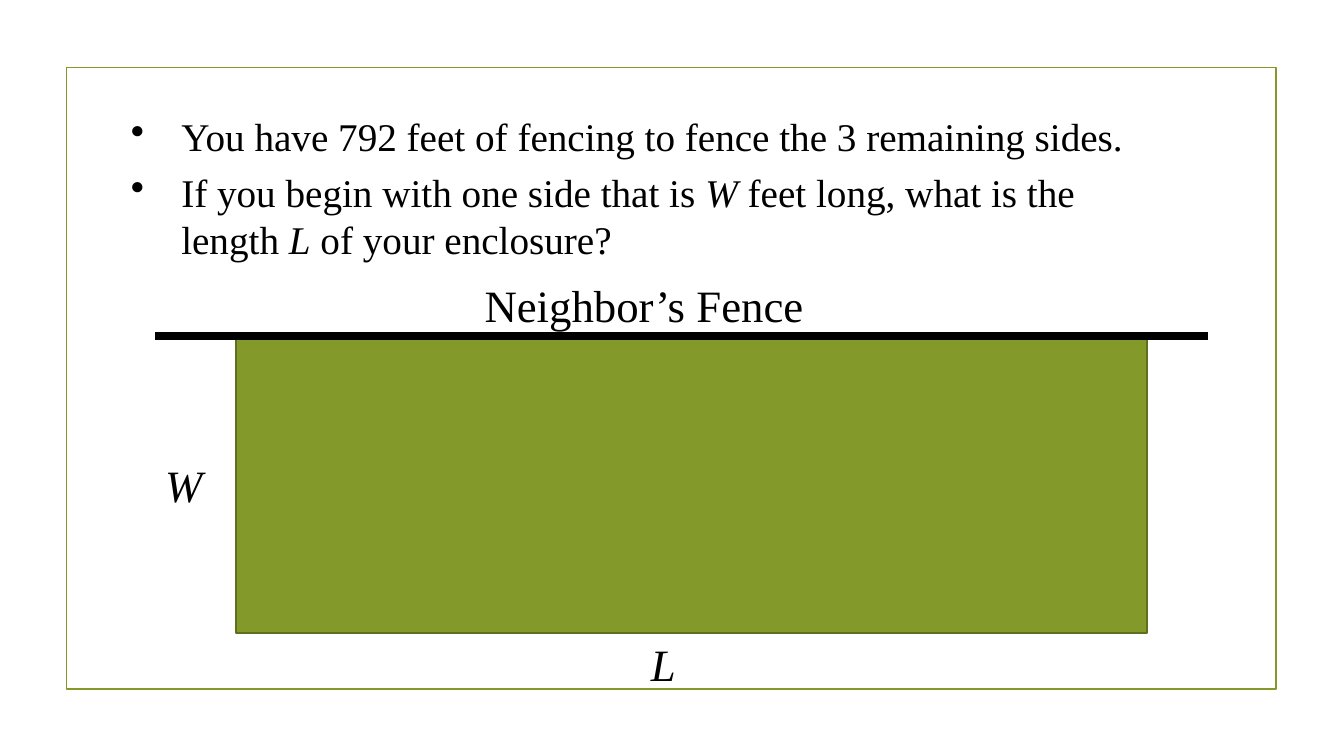
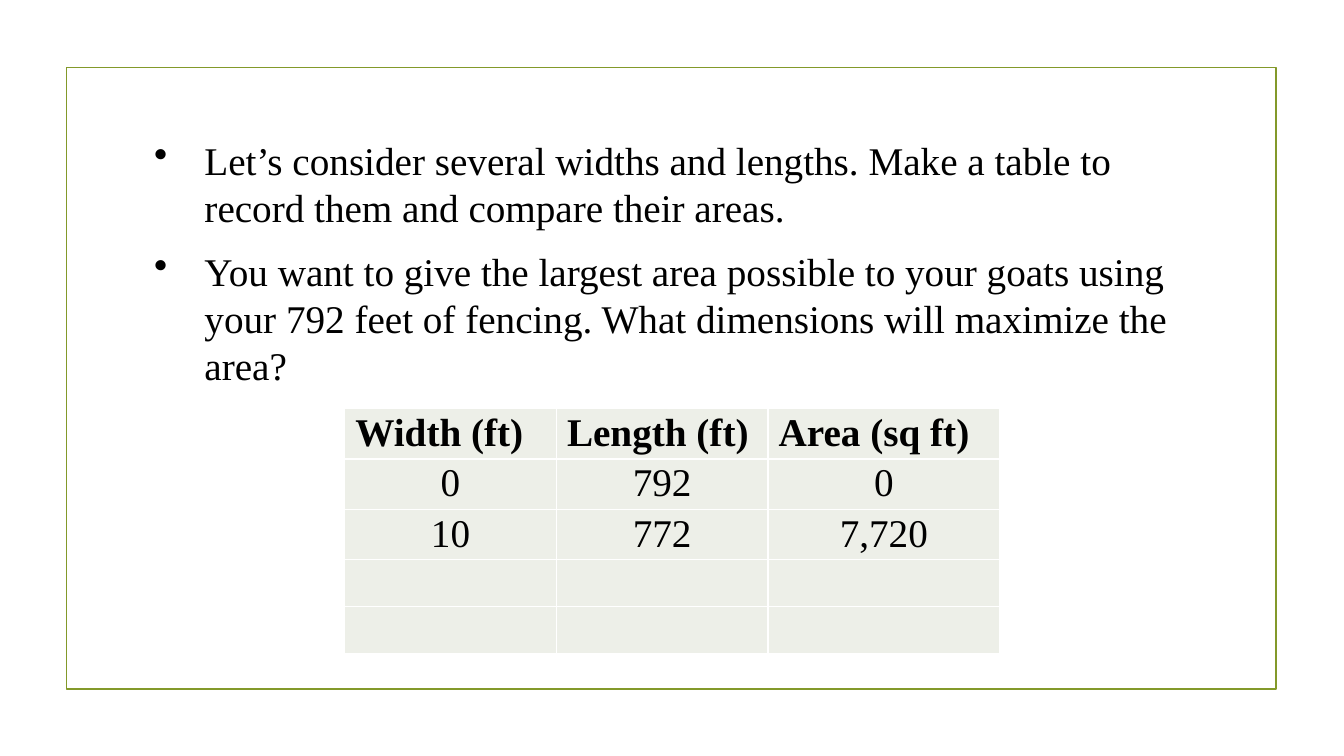
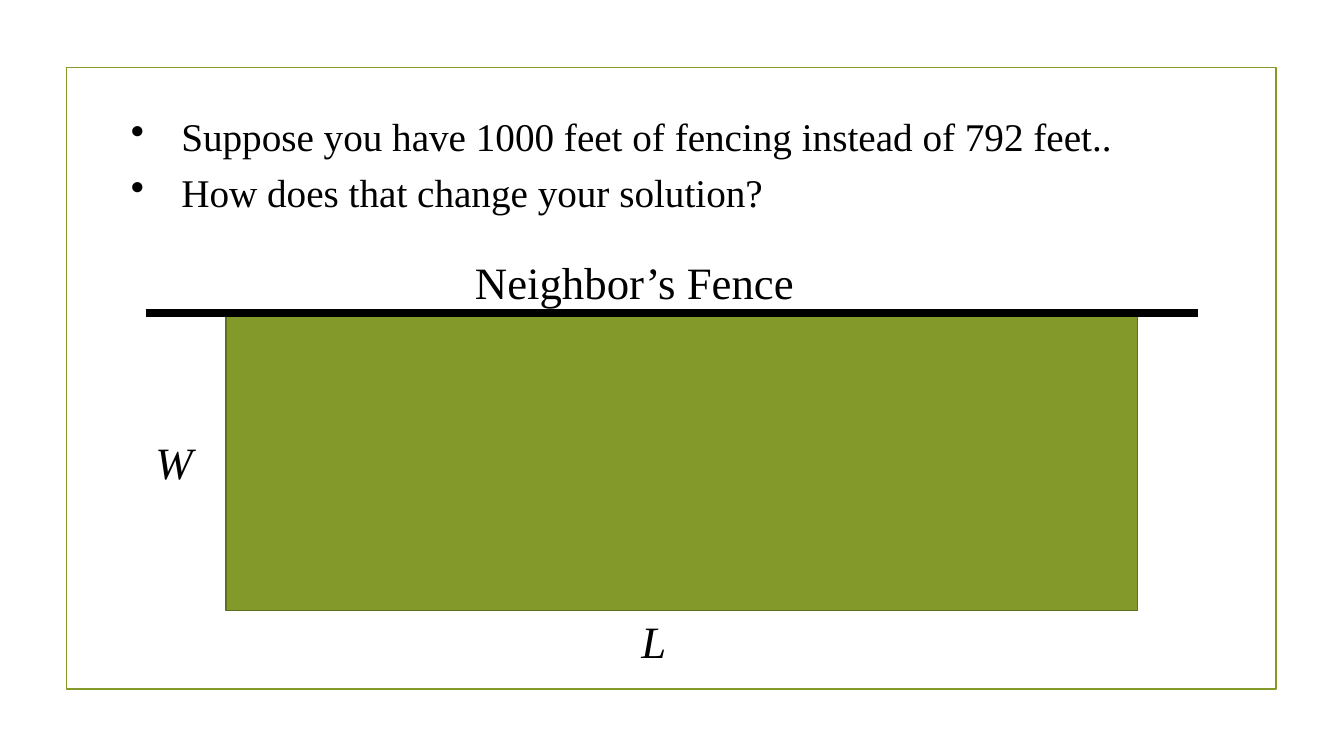
import pptx
import pptx.util
import pptx.dml.color
import pptx.enum.shapes
import pptx.enum.text
import pptx.oxml
import pptx.oxml.ns
from lxml import etree

Pt = pptx.util.Pt
qn = pptx.oxml.ns.qn

COLORS = {
    "ink": "000000",
    "green": "83992A",
    "dark_green": "5F6F1E",
    "cell": "EDEFE8",
    "white": "FFFFFF",
}
FONT = "Times New Roman"
BODY_SIZE = 28
LABEL_SIZE = 32


def color(name):
    return pptx.dml.color.RGBColor.from_string(COLORS[name])


def add_solid_fill(parent, name):
    fill = etree.SubElement(parent, qn("a:solidFill"))
    etree.SubElement(fill, qn("a:srgbClr"), val=COLORS[name])


class Slides:
    """Holds the deck, its style and the current page."""

    def __init__(self):
        self.deck = pptx.Presentation()
        self.deck.slide_width, self.deck.slide_height = Pt(960), Pt(540)
        self.page = None

    def new_page(self):
        self.page = self.deck.slides.add_slide(self.deck.slide_layouts[6])
        self.rectangle(47.5, 48.2, 864, 444.2, None, "green")

    def style(self, para, size, bold=False, italic=False):
        font = para.font
        font.name, font.size = FONT, Pt(size)
        font.bold, font.italic = bold, italic
        font.color.rgb = color("ink")

    def rectangle(self, left, top, width, height, fill, line):
        shape = self.page.shapes.add_shape(
            pptx.enum.shapes.MSO_SHAPE.RECTANGLE,
            Pt(left), Pt(top), Pt(width), Pt(height))
        shape.shadow.inherit = False
        if fill:
            shape.fill.solid()
            shape.fill.fore_color.rgb = color(fill)
        else:
            shape.fill.background()
        shape.line.color.rgb = color(line)
        shape.line.width = Pt(1.25)

    def text_box(self, left, top, width, height):
        box = self.page.shapes.add_textbox(Pt(left), Pt(top), Pt(width), Pt(height))
        box.text_frame.word_wrap = True
        return box.text_frame

    def label(self, text, left, top, width, italic=False, inset=7.2):
        frame = self.text_box(left, top, width, 46)
        frame.margin_left = Pt(inset)
        para = frame.paragraphs[0]
        para.text = text
        self.style(para, LABEL_SIZE, italic=italic)

    def bullets(self, left, top, width, height, items, gap):
        """Text between asterisks is set in italics."""
        frame = self.text_box(left, top, width, height)
        for number, item in enumerate(items):
            para = frame.add_paragraph() if number else frame.paragraphs[0]
            properties = para._p.get_or_add_pPr()
            properties.set("marL", str(Pt(36)))
            properties.set("indent", str(-Pt(36)))
            bullet_color = etree.SubElement(properties, qn("a:buClr"))
            etree.SubElement(bullet_color, qn("a:srgbClr"), val=COLORS["ink"])
            etree.SubElement(properties, qn("a:buChar"), char="•")
            para.space_after = Pt(gap)
            self.style(para, BODY_SIZE)
            for index, text in enumerate(item.split("*")):
                span = para.add_run()
                span.text = text
                if index % 2:
                    span.font.italic = True

    def line(self, left, top, length, width):
        line = self.page.shapes.add_connector(
            pptx.enum.shapes.MSO_CONNECTOR.STRAIGHT,
            Pt(left), Pt(top), Pt(left + length), Pt(top))
        line.line.color.rgb = color("ink")
        line.line.width = Pt(width)
        etree.SubElement(line._element.spPr, qn("a:effectLst"))

    def fence_diagram(self, left, top):
        """Yard below the neighbor's fence; the fence starts at left, top."""
        self.label("Neighbor’s Fence", left + 228.2, top - 45, 250)
        self.rectangle(left + 57.6, top, 651, 212.4, "green", "dark_green")
        self.label("W", left, top + 83.2, 62.6, italic=True)
        self.label("L", left + 323.3, top + 211.3, 66, italic=True, inset=30.8)
        self.line(left, top, 752, 6)

    def table(self, left, top, widths, heights, rows):
        table = self.page.shapes.add_table(
            len(heights), len(widths), Pt(left), Pt(top),
            Pt(sum(widths)), Pt(sum(heights))).table
        table.first_row = table.horz_banding = False
        for column, width in zip(table.columns, widths):
            column.width = Pt(width)
        for row, height in zip(table.rows, heights):
            row.height = Pt(height)
            for cell in row.cells:
                self.cell_frame(cell)
        for row_number, texts in enumerate(rows):
            for column_number, text in enumerate(texts):
                para = table.cell(row_number, column_number).text_frame.paragraphs[0]
                para.text = text
                para.line_spacing = 1.07
                if row_number:
                    para.alignment = pptx.enum.text.PP_ALIGN.CENTER
                self.style(para, BODY_SIZE, bold=row_number == 0)

    def cell_frame(self, cell):
        cell.margin_left = cell.margin_right = Pt(7.7)
        cell.margin_top = cell.margin_bottom = 0
        properties = cell._tc.get_or_add_tcPr()
        for side in ("lnL", "lnR", "lnT", "lnB"):
            border = etree.SubElement(properties, qn("a:" + side), w=str(Pt(1)))
            add_solid_fill(border, "white")
        cell.fill.solid()
        cell.fill.fore_color.rgb = color("cell")


def main():
    slides = Slides()

    # The problem
    slides.new_page()
    slides.fence_diagram(110.8, 240)
    slides.bullets(86.4, 77, 754.6, 115.2, [
        "You have 792 feet of fencing to fence the 3 remaining sides.",
        "If you begin with one side that is *W* feet long, "
        "what is the length *L* of your enclosure?",
    ], 6)

    # Table of widths, lengths and areas
    slides.new_page()
    slides.bullets(103, 93.6, 753.8, 230.4, [
        "Let’s consider several widths and lengths. "
        "Make a table to record them and compare their areas.",
        "You want to give the largest area possible to your goats using "
        "your 792 feet of fencing. What dimensions will maximize the area?",
    ], 12)
    slides.table(246.2, 291.8, [151.2, 151.2, 165.6], [36] * 3 + [33.6] * 2, [
        ["Width (ft)", "Length (ft)", "Area (sq ft)"],
        ["0", "792", "0"],
        ["10", "772", "7,720"],
    ])

    # A longer fence
    slides.new_page()
    slides.fence_diagram(104, 223.7)
    slides.bullets(86.4, 77, 754.6, 81.4, [
        "Suppose you have 1000 feet of fencing instead of 792 feet..",
        "How does that change your solution?",
    ], 6)

    slides.deck.save("out.pptx")


if __name__ == "__main__":
    main()
